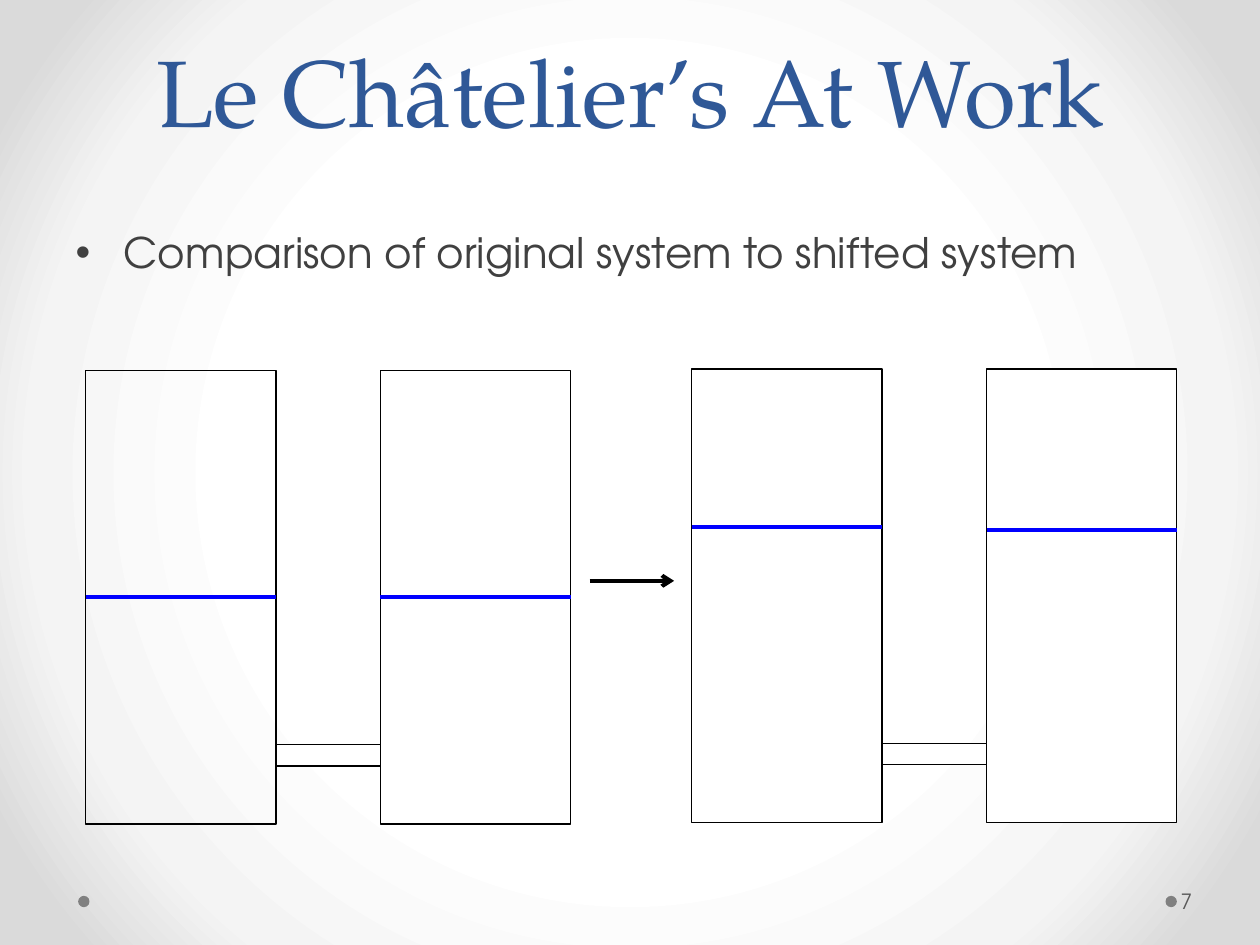
from lxml import etree
from pptx import Presentation
from pptx import util as u
from pptx.dml.color import RGBColor
from pptx.enum import shapes, text
from pptx.oxml.ns import qn

COLORS = {"title": "2F5897", "body": "404040", "number": "595959", "dot": "808080",
          "black": "000000", "white": "FFFFFF", "level": "0000FF"}
BACKGROUND = [(50, "FFFFFF"), (76, "F4F4F4"), (92, "DADADA")]
TITLE = "Le Châtelier’s At Work"
BULLET = "Comparison of original system to shifted system"
NUMBER = "7"
SYSTEMS = [
    {"left": 0.68, "top": 2.94, "levels": (None, None)},
    {"left": 5.49, "top": 2.93, "levels": (4.18, 4.21)},
]
TANK_W, TANK_H, PIPE_W, PIPE_H, PIPE_DROP = 1.51, 3.6, 0.83, 0.17, 2.97
DOTS = [9.25, 0.62]
ARROW = (4.68, 4.61, 5.35, 4.61)


def inches(*values):
    return [u.Inches(v) for v in values]


def rgb(name):
    return RGBColor.from_string(COLORS[name])


def sub(parent, tag, **attrs):
    return etree.SubElement(parent, qn(tag), attrs)


def paint_background(s):
    fill = s.background.fill
    fill.gradient()
    grad = s.background._cSld.find(".//" + qn("a:gradFill"))
    for child in list(grad):
        grad.remove(child)
    stops = sub(grad, "a:gsLst")
    for pos, color in BACKGROUND:
        sub(sub(stops, "a:gs", pos=str(pos * 1000)), "a:srgbClr", val=color)
    sub(sub(grad, "a:path", path="circle"), "a:fillToRect", l="50000", t="50000", r="50000", b="50000")


def add_box(parent, kind, box, fill=None, line=None):
    sp = parent.add_shape(kind, *inches(*box))
    sp.shadow.inherit = False
    if fill:
        sp.fill.solid()
        sp.fill.fore_color.rgb = rgb(fill)
    else:
        sp.fill.background()
    if line:
        sp.line.color.rgb = rgb(line)
        sp.line.width = u.Pt(0.75)
    else:
        sp.line.fill.background()
    return sp


def add_line(parent, ends, color):
    line = parent.add_connector(shapes.MSO_CONNECTOR.STRAIGHT, *inches(*ends))
    line.line.color.rgb = rgb(color)
    line.line.width = u.Pt(2.25)
    sub(line._element.spPr, "a:effectLst")
    return line


def write(sp, box, content, font, color, frame=None, para=None):
    sp.left, sp.top, sp.width, sp.height = inches(*box)
    tf = sp.text_frame
    tf.word_wrap = True
    p = tf.paragraphs[0]
    r = p.add_run()
    r.text = content
    r.font.color.rgb = rgb(color)
    for target, values in ((tf, frame), (p, para), (r.font, font)):
        for key, value in (values or {}).items():
            setattr(target, key, value)
    return p


def add_system(s, left, top, levels):
    group = s.shapes.add_group_shape().shapes
    rect = shapes.MSO_SHAPE.RECTANGLE
    lefts = [left, left + TANK_W + PIPE_W]
    tanks = [add_box(group, rect, (x, top, TANK_W, TANK_H), fill, "black")
             for x, fill in zip(lefts, (None, "white"))]
    add_box(group, rect, (left + TANK_W, top + PIPE_DROP, PIPE_W, PIPE_H), "white", "black")
    for x, tank, level in zip(lefts, tanks, levels):
        y = level or top + TANK_H / 2
        line = add_line(group, (x, y, x + TANK_W, y), "level")
        if level is None:
            line.begin_connect(tank, 1)
            line.end_connect(tank, 3)


def main():
    prs = Presentation()
    prs.slide_width, prs.slide_height = inches(10, 7.5)
    s = prs.slides.add_slide(prs.slide_layouts[1])
    paint_background(s)

    for x in DOTS:
        add_box(s.shapes, shapes.MSO_SHAPE.OVAL, (x, 7.11, 0.09, 0.09), "dot")

    write(s.shapes.title, (0.5, 0, 9, 1.21), TITLE,
          {"name": "TeX Gyre Pagella", "size": u.Pt(54)}, "title",
          {"vertical_anchor": text.MSO_ANCHOR.BOTTOM},
          {"alignment": text.PP_ALIGN.CENTER, "line_spacing": u.Pt(58)})
    p = write(s.placeholders[1], (0.5, 1.75, 9, 4.95), BULLET,
              {"name": "TeX Gyre Adventor", "size": u.Pt(24)}, "body",
              None, {"space_before": u.Pt(4.8)})
    pPr = p._p.get_or_add_pPr()
    pPr.set("marL", str(u.Inches(0.38)))
    pPr.set("indent", str(u.Inches(-0.38)))
    sub(pPr, "a:buFont", typeface="Arial")
    sub(pPr, "a:buChar", char="•")

    for system in SYSTEMS:
        add_system(s, **system)

    arrow = add_line(s.shapes, ARROW, "black")
    sub(arrow.line._get_or_add_ln(), "a:tailEnd", type="arrow")

    box = (9.34, 6.95, 0.61, 0.4)
    write(s.shapes.add_textbox(*inches(*box)), box, NUMBER,
          {"name": "TeX Gyre Adventor", "size": u.Pt(12)}, "number",
          {"vertical_anchor": text.MSO_ANCHOR.MIDDLE, "margin_left": u.Inches(0.03),
           "margin_right": u.Inches(0.05)})
    prs.save("out.pptx")


if __name__ == "__main__":
    main()
